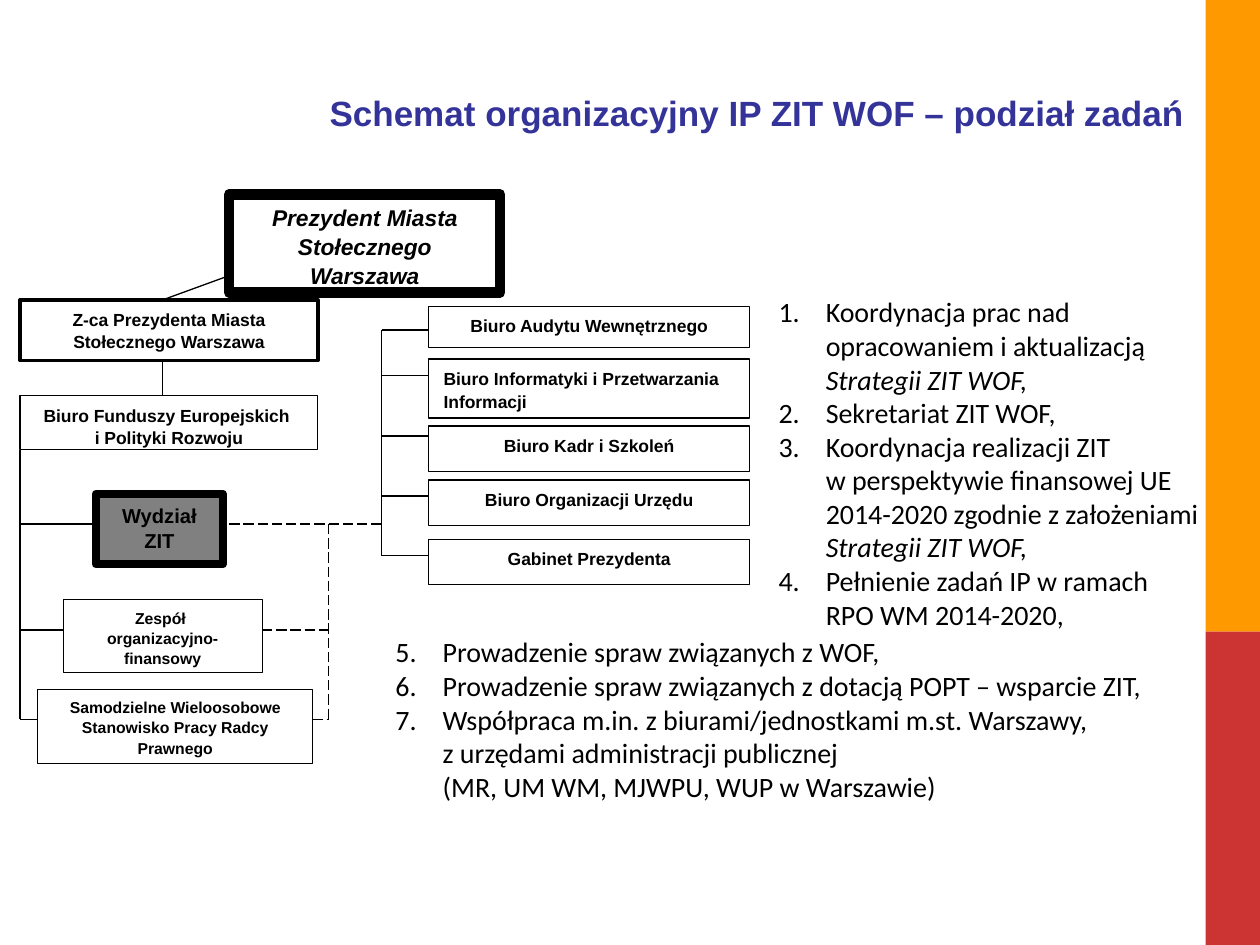
from lxml import etree
from pptx import Presentation
from pptx.dml.color import RGBColor
from pptx.enum.dml import MSO_LINE
from pptx.enum.shapes import MSO_CONNECTOR, MSO_SHAPE
from pptx.enum.text import MSO_ANCHOR, MSO_AUTO_SIZE, PP_ALIGN
from pptx.oxml.ns import qn
from pptx.util import Pt

RECTANGLE = MSO_SHAPE.RECTANGLE
STRAIGHT = MSO_CONNECTOR.STRAIGHT
LONG_DASH = MSO_LINE.LONG_DASH
TOP, MIDDLE = MSO_ANCHOR.TOP, MSO_ANCHOR.MIDDLE
GROW = MSO_AUTO_SIZE.SHAPE_TO_FIT_TEXT
LEFT, CENTER, RIGHT = PP_ALIGN.LEFT, PP_ALIGN.CENTER, PP_ALIGN.RIGHT

BLACK, WHITE, GREY = "000000", "FFFFFF", "808080"
ORANGE, RED, NAVY = "FF9900", "CC3333", "333399"

BUREAUX = [  # top, height, connector height, alignment, name
    (64, 23.8, 77.6, CENTER, "Biuro Audytu Wewnętrznego"),
    (94.2, 33.8, 103.6, LEFT, "Biuro Informatyki i Przetwarzania Informacji"),
    (132.4, 25.9, 138.1, CENTER, "Biuro Kadr i Szkoleń"),
    (163.3, 25.9, 172.5, CENTER, "Biuro Organizacji Urzędu"),
    (197.2, 25.9, 206.5, CENTER, "Gabinet Prezydenta"),
]
COORDINATION_TASKS = [  # each task is a list of (text, italic)
    [("Koordynacja prac nad opracowaniem i aktualizacją ", False),
     ("Strategii ZIT WOF,", True)],
    [("Sekretariat ZIT WOF,", False)],
    [("Koordynacja realizacji ZIT \nw perspektywie finansowej UE "
      "2014-2020 zgodnie z założeniami ", False),
     ("Strategii ZIT WOF,", True)],
    [("Pełnienie zadań IP w ramach RPO WM 2014-2020,", False)],
]
COOPERATION_TASKS = [
    [("Prowadzenie spraw związanych z WOF,", False)],
    [("Prowadzenie spraw związanych z dotacją POPT – wsparcie ZIT,", False)],
    [("Współpraca m.in. z biurami/jednostkami m.st. Warszawy, \n"
      "z urzędami administracji publicznej \n"
      "(MR, UM WM, MJWPU, WUP w Warszawie)", False)],
]


def color(value):
    return RGBColor.from_string(value)


def points(*values):
    return [Pt(value) for value in values]


def add_text(para, text, font_name, size, ink=BLACK, bold=False, italic=False):
    """Add text to a paragraph, turning each newline into a line break."""
    for number, line in enumerate(text.split("\n")):
        if number:
            para.add_line_break()
        span = para.add_run()
        span.text = line
        font = span.font
        font.name, font.size = font_name, Pt(size)
        font.bold, font.italic = bold, italic
        font.color.rgb = color(ink)


def add_rectangle(page, box, fill=None, line_width=None):
    shape = page.shapes.add_shape(RECTANGLE, *points(*box))
    shape.shadow.inherit = False
    if fill:
        shape.fill.solid()
        shape.fill.fore_color.rgb = color(fill)
    else:
        shape.fill.background()
    if line_width:
        shape.line.color.rgb = color(BLACK)
        shape.line.width = Pt(line_width)
    else:
        shape.line.fill.background()
    return shape


def add_unit(page, box, text, size=10, fill=WHITE, line_width=0.75,
             align=CENTER, italic=False):
    """Draw one organisational unit of the chart."""
    frame = add_rectangle(page, box, fill, line_width).text_frame
    frame.word_wrap = True
    frame.vertical_anchor = TOP
    frame.margin_left = frame.margin_right = Pt(8.64)
    frame.margin_top = frame.margin_bottom = Pt(4.32)
    para = frame.paragraphs[0]
    para.alignment = align
    para.line_spacing = 1.07
    para.space_after = Pt(8)
    add_text(para, text, "Arial", size, bold=True, italic=italic)


def add_link(page, start, end, dashed=False):
    link = page.shapes.add_connector(STRAIGHT, *points(*start, *end))
    link.line.color.rgb = color(BLACK)
    link.line.width = Pt(0.75)
    if dashed:
        link.line.dash_style = LONG_DASH
    etree.SubElement(link._element.spPr, qn("a:effectLst"))


def add_side_band(page, box):
    left, top, width, height = box
    orange_height = 361
    add_rectangle(page, (left, top, width, orange_height), ORANGE)
    add_rectangle(page, (left, top + orange_height, width, height - orange_height), RED)


def add_title(page, box):
    title = page.shapes.title
    title.left, title.top, title.width, title.height = points(*box)
    frame = title.text_frame
    frame.word_wrap = True
    frame.vertical_anchor = MIDDLE
    para = frame.paragraphs[0]
    para.alignment = RIGHT
    add_text(para, "Schemat organizacyjny IP ZIT WOF – podział zadań",
             "Arial", 20, NAVY, bold=True)


def add_management(page, box):
    """Draw the president, the deputy and the units below them."""
    left, top, width, _ = box
    middle = left + 81.4
    dashed_rail = left + 176.4
    zit_y, team_y, counsel_y = (top + offset for offset in (188.5, 249, 300.1))

    add_link(page, (left + 152.7, top + 34.4), (middle, top + 60.4))
    add_link(page, (middle, top + 95), (middle, top + 115.1))
    add_link(page, (left, top + 146), (left, counsel_y))
    add_link(page, (dashed_rail, zit_y), (dashed_rail, counsel_y), dashed=True)
    for y, unit_left, unit_right, link_end in (
            (zit_y, 43.2, 119.5, 206.7),
            (team_y, 24.5, 138.3, 176.4),
            (counsel_y, 10.1, 167.1, 176.4)):
        add_link(page, (left, y), (left + unit_left, y))
        add_link(page, (left + unit_right, y), (left + link_end, y), dashed=True)

    add_unit(page, (left, top + 60.4, width, 34.6),
             "Z-ca Prezydenta Miasta Stołecznego Warszawa", line_width=2.25)
    add_unit(page, (left, top + 115.1, width, 31),
             "Biuro Funduszy Europejskich \ni Polityki Rozwoju")
    add_unit(page, (left + 43.2, top + 171.2, 72.7, 40.3), "Wydział ZIT",
             size=11.5, fill=GREY, line_width=4.5)
    add_unit(page, (left + 24.5, top + 231.7, 113.8, 41.8),
             "Zespół \norganizacyjno-finansowy", size=9, fill=None, line_width=0.5)
    add_unit(page, (left + 10.1, top + 282.8, 157, 42.5),
             "Samodzielne Wieloosobowe Stanowisko Pracy Radcy Prawnego",
             size=9, fill=None, line_width=0.5)
    add_unit(page, (left + 119.5, top, 154.8, 56.2),
             "Prezydent Miasta Stołecznego Warszawa",
             size=13, line_width=6, italic=True)


def add_bureaux(page, box):
    """Draw the bureaux and the trunk line that joins them."""
    left, top, width, _ = box
    unit_left = left + 26.6
    add_link(page, (left, top + BUREAUX[0][2]), (left, top + BUREAUX[-1][2]))
    for unit_top, height, link_y, align, name in BUREAUX:
        add_link(page, (left, top + link_y), (unit_left, top + link_y))
        add_unit(page, (unit_left, top + unit_top, width - 26.6, height),
                 name, align=align)


def add_task_list(page, box, tasks, first_number):
    frame = page.shapes.add_textbox(*points(*box)).text_frame
    frame.word_wrap = True
    frame.auto_size = GROW
    for position, task in enumerate(tasks):
        para = frame.add_paragraph() if position else frame.paragraphs[0]
        properties = para._p.get_or_add_pPr()
        properties.set("marL", str(Pt(27)))
        properties.set("indent", str(Pt(-27)))
        numbering = etree.SubElement(properties, qn("a:buAutoNum"))
        numbering.set("type", "arabicPeriod")
        numbering.set("startAt", str(first_number))
        for text, italic in task:
            add_text(para, text, "Calibri", 16, italic=italic)


def main():
    deck = Presentation()
    deck.slide_width, deck.slide_height = points(720, 540)
    page = deck.slides.add_slide(deck.slide_layouts[5])
    add_side_band(page, (689, 0, 31, 540))
    add_title(page, (173.5, 19.5, 510.5, 90))
    add_management(page, (11.5, 111, 170, 326))
    add_bureaux(page, (218.2, 111, 210.2, 223))
    add_task_list(page, (437.8, 165, 256.3, 220.3), COORDINATION_TASKS, 1)
    add_task_list(page, (218.9, 359.3, 491.8, 104.4), COOPERATION_TASKS, 5)
    deck.save("out.pptx")


if __name__ == "__main__":
    main()
